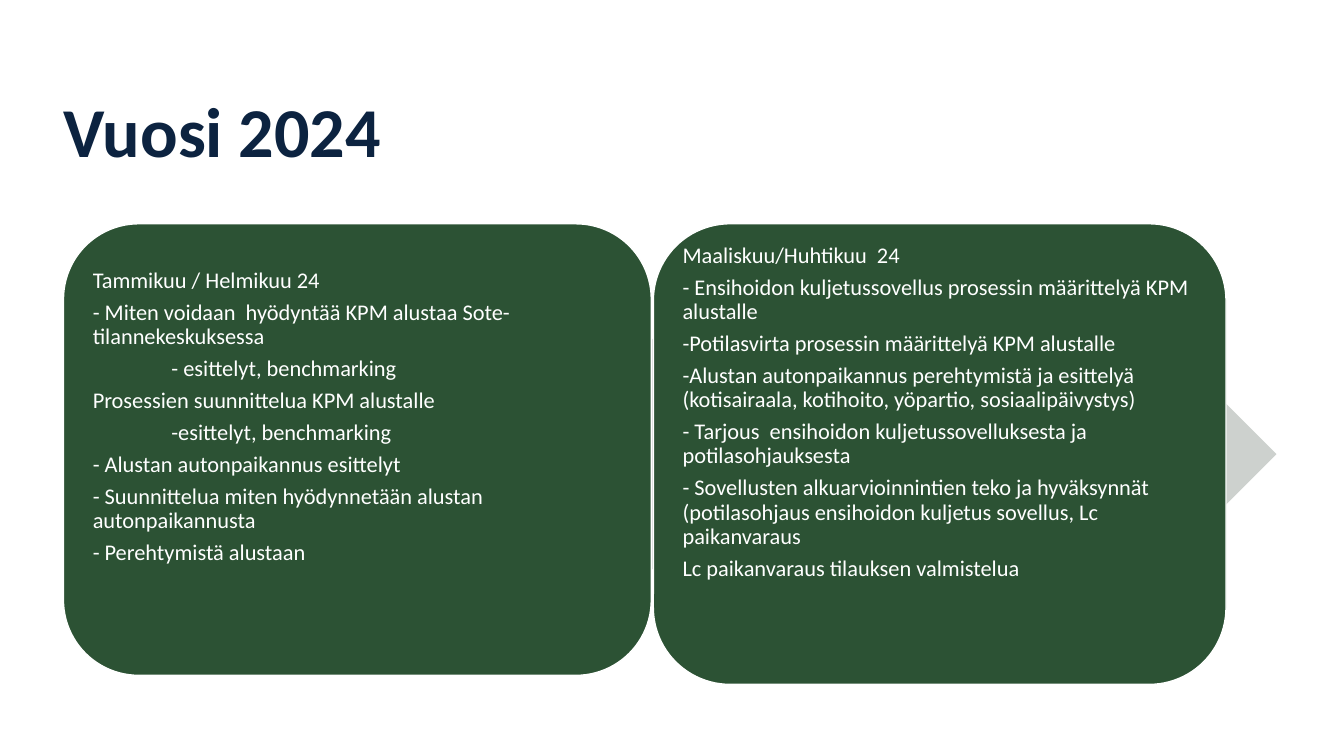
from pptx import Presentation
from pptx.dml.color import RGBColor
from pptx.enum.shapes import MSO_SHAPE
from pptx.enum.text import MSO_ANCHOR
from pptx.util import Inches, Pt

NAVY = RGBColor(0x0C, 0x23, 0x40)
GREEN = RGBColor(0x2C, 0x52, 0x34)
GREY = RGBColor(0xCD, 0xD1, 0xCE)
WHITE = RGBColor(0xFF, 0xFF, 0xFF)
FONT = "Calibri"
PADDING = 0.07
SUB_INDENT = Inches(0.78)

WINTER = [
    (0, "Tammikuu / Helmikuu 24"),
    (0, "- Miten voidaan  hyödyntää KPM alustaa Sote-tilannekeskuksessa"),
    (1, "- esittelyt, benchmarking"),
    (0, "Prosessien suunnittelua KPM alustalle"),
    (1, "-esittelyt, benchmarking"),
    (0, "- Alustan autonpaikannus esittelyt"),
    (0, "- Suunnittelua miten hyödynnetään alustan autonpaikannusta"),
    (0, "- Perehtymistä alustaan"),
]
SPRING = [
    (0, "Maaliskuu/Huhtikuu  24"),
    (0, "- Ensihoidon kuljetussovellus prosessin määrittelyä KPM alustalle"),
    (0, "-Potilasvirta prosessin määrittelyä KPM alustalle"),
    (0, "-Alustan autonpaikannus perehtymistä ja esittelyä (kotisairaala, kotihoito, yöpartio, sosiaalipäivystys)"),
    (0, "- Tarjous  ensihoidon kuljetussovelluksesta ja potilasohjauksesta"),
    (0, "- Sovellusten alkuarvioinnintien teko ja hyväksynnät (potilasohjaus ensihoidon kuljetus sovellus, Lc paikanvaraus"),
    (0, "Lc paikanvaraus tilauksen valmistelua"),
]


def add_panel(page, kind, box, colour):
    panel = page.shapes.add_shape(kind, *map(Inches, box))
    panel.shadow.inherit = False
    panel.fill.solid()
    panel.fill.fore_color.rgb = colour
    return panel


def add_text_frame(page, box, padding=0, top_padding=0):
    frame = page.shapes.add_textbox(*map(Inches, box)).text_frame
    frame.word_wrap = True
    frame.vertical_anchor = MSO_ANCHOR.TOP
    frame.margin_left = frame.margin_right = frame.margin_bottom = Inches(padding)
    frame.margin_top = Inches(top_padding)
    return frame


def style(para, size, colour, spacing, bold=False):
    para.line_spacing = spacing
    para.font.name = FONT
    para.font.size = Pt(size)
    para.font.bold = bold
    para.font.color.rgb = colour


def add_title(page, box, wording):
    para = add_text_frame(page, box).paragraphs[0]
    para.text = wording
    style(para, 50, NAVY, 0.8, bold=True)


def add_period(page, box, lines, text_drop):
    left, top, width, height = box
    panel = add_panel(page, MSO_SHAPE.ROUNDED_RECTANGLE, box, GREEN)
    panel.line.color.rgb = WHITE
    panel.line.width = Pt(1)
    inset = 0.22
    text_box = (left + inset, top + 0.2, width - 2 * inset, height - 2 * inset)
    frame = add_text_frame(page, text_box, PADDING, text_drop)
    for index, (level, wording) in enumerate(lines):
        para = frame.paragraphs[0] if index == 0 else frame.add_paragraph()
        para.text = wording
        para.space_after = Pt(5.6)
        if level:
            para._p.get_or_add_pPr().set("marL", str(SUB_INDENT))
        style(para, 16, WHITE, 0.9)


def add_timeline(page, box):
    left, top, width, height = box
    arrow = add_panel(page, MSO_SHAPE.RIGHT_ARROW, box, GREY)
    arrow.line.fill.background()
    add_period(page, (left - 0.04, top, 5.83, height - 0.09), WINTER, 0.25)
    add_period(page, (left + 5.81, top, 5.68, height), SPRING, 0)


def main():
    deck = Presentation()
    deck.slide_width, deck.slide_height = Inches(13.33), Inches(7.5)
    page = deck.slides.add_slide(deck.slide_layouts[6])
    add_title(page, (0.63, 1.03, 10.67, 1.06), "Vuosi 2024")
    add_timeline(page, (0.67, 2.22, 11.99, 4.57))
    deck.save("out.pptx")


if __name__ == "__main__":
    main()
